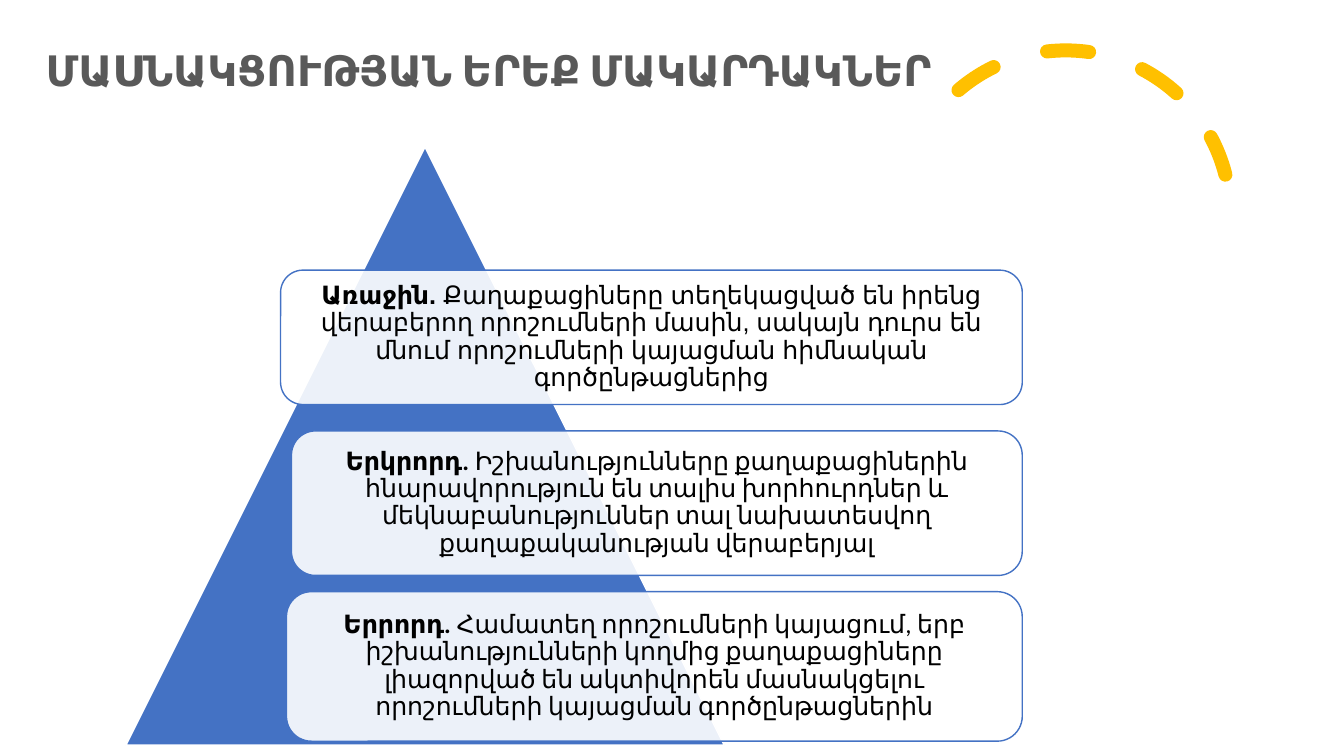
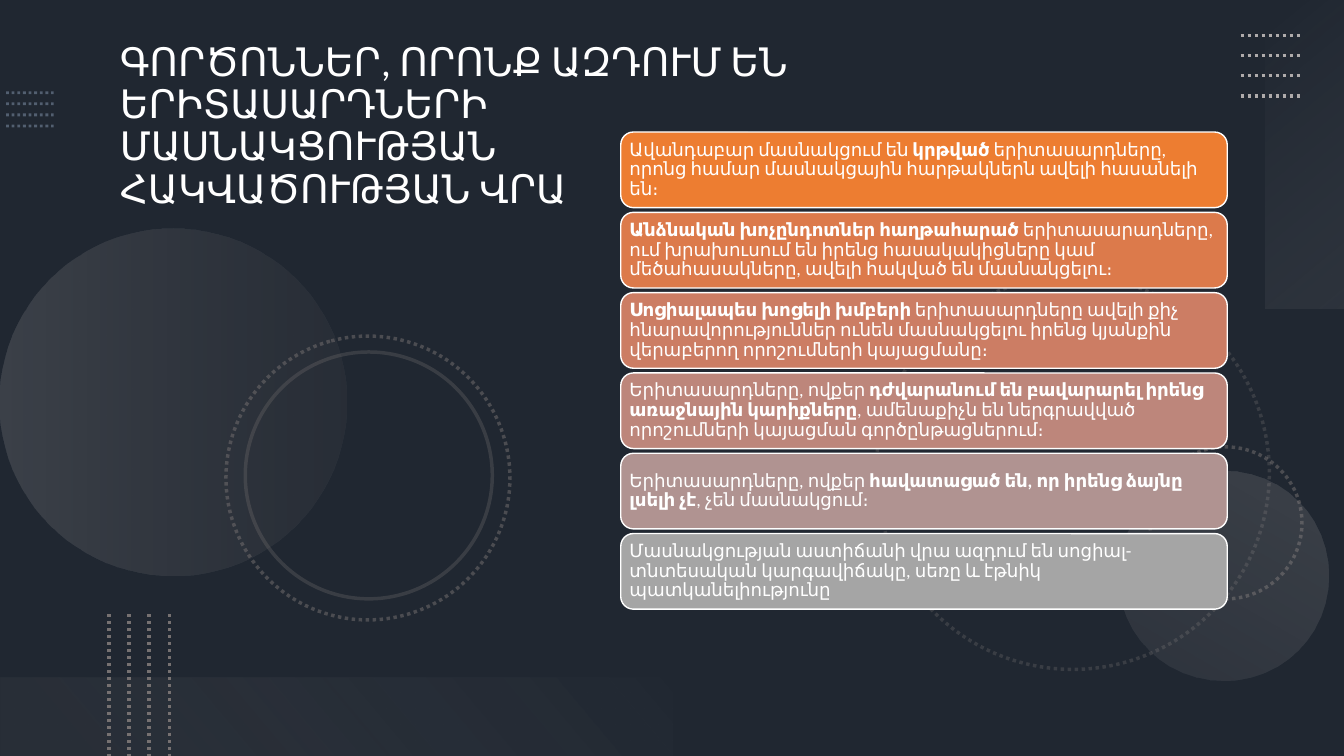
from lxml import etree
from pptx import Presentation
from pptx.dml.color import RGBColor
from pptx.enum.dml import MSO_LINE
from pptx.enum.shapes import MSO_CONNECTOR, MSO_SHAPE
from pptx.enum.text import MSO_ANCHOR, PP_ALIGN
from pptx.oxml.ns import qn
from pptx.util import Inches, Pt

SLIDE_W, SLIDE_H = Inches(13.33), Inches(7.5)
COLUMNS, ROWS = 80, 45

ARC, TRIANGLE = MSO_SHAPE.ARC, MSO_SHAPE.ISOSCELES_TRIANGLE
OVAL, RECT, ROUNDED = MSO_SHAPE.OVAL, MSO_SHAPE.RECTANGLE, MSO_SHAPE.ROUNDED_RECTANGLE
STRAIGHT = MSO_CONNECTOR.STRAIGHT
DASH, DOT = MSO_LINE.DASH, MSO_LINE.ROUND_DOT
LEFT, CENTER = PP_ALIGN.LEFT, PP_ALIGN.CENTER
TOP, MIDDLE = MSO_ANCHOR.TOP, MSO_ANCHOR.MIDDLE

BLACK = RGBColor(0x00, 0x00, 0x00)
WHITE = RGBColor(0xFF, 0xFF, 0xFF)
BLUE = RGBColor(0x44, 0x72, 0xC4)
GOLD = RGBColor(0xFF, 0xC0, 0x00)
CHARCOAL = RGBColor(0x59, 0x59, 0x59)
SLATE = RGBColor(0x44, 0x54, 0x6A)
STEEL = RGBColor(0x84, 0x97, 0xB0)
SILVER = RGBColor(0xAF, 0xAB, 0xAB)
GREY = RGBColor(0x76, 0x71, 0x71)
PALE = RGBColor(0xF5, 0xF5, 0xF5)
MIST = RGBColor(0xF1, 0xF0, 0xF0)
FACTOR_COLOURS = [
    RGBColor(0xED, 0x7D, 0x31), RGBColor(0xDC, 0x7A, 0x4B), RGBColor(0xCC, 0x7D, 0x64),
    RGBColor(0xBD, 0x86, 0x7B), RGBColor(0xB0, 0x93, 0x91), RGBColor(0xA5, 0xA5, 0xA5),
]

BODY_FONT, FIRST_LEVEL_FONT = "Calibri", "Arial"
LINE_SPACING = 0.9

LEVELS = [
    (16.7, 8, FIRST_LEVEL_FONT, "Առաջին. ",
     "Քաղաքացիները տեղեկացված են իրենց վերաբերող որոշումների մասին, "
     "սակայն դուրս են մնում որոշումների կայացման հիմնական գործընթացներից"),
    (17.35, 8.6, BODY_FONT, "Երկրորդ. ",
     "Իշխանությունները քաղաքացիներին հնարավորություն են տալիս խորհուրդներ և "
     "մեկնաբանություններ տալ նախատեսվող քաղաքականության վերաբերյալ"),
    (17.05, 8.9, BODY_FONT, "Երրորդ. ",
     "Համատեղ որոշումների կայացում, երբ իշխանությունների կողմից քաղաքացիները "
     "լիազորված են ակտիվորեն մասնակցելու որոշումների կայացման գործընթացներին"),
]

FACTORS = [
    [("Ավանդաբար մասնակցում են ", False), ("կրթված", True),
     (" երիտասարդները, որոնց համար մասնակցային հարթակներն ավելի հասանելի են։", False)],
    [("Անձնական խոչընդոտներ հաղթահարած", True),
     (" երիտասարադները, ում խրախուսում են իրենց հասակակիցները կամ "
      "մեծահասակները, ավելի հակված են մասնակցելու։", False)],
    [("Սոցիալապես խոցելի խմբերի", True),
     (" երիտասարդները ավելի քիչ հնարավորություններ ունեն մասնակցելու իրենց "
      "կյանքին վերաբերող որոշումների կայացմանը։", False)],
    [("Երիտասարդները, ովքեր ", False),
     ("դժվարանում են բավարարել իրենց առաջնային կարիքները", True),
     (", ամենաքիչն են ներգրավված որոշումների կայացման գործընթացներում։", False)],
    [("Երիտասարդները, ովքեր ", False),
     ("հավատացած են, որ իրենց ձայնը լսելի չէ", True), (", չեն մասնակցում։", False)],
    [("Մասնակցության աստիճանի վրա ազդում են սոցիալ-տնտեսական կարգավիճակը, "
      "սեռը և էթնիկ պատկանելիությունը", False)],
]


def across(columns):
    return round(SLIDE_W * columns / COLUMNS)


def down(rows):
    return round(SLIDE_H * rows / ROWS)


def cells(left, top, width, height):
    return across(left), down(top), across(width), down(height)


def set_opacity(element, percents):
    for colour, percent in zip(element.iter(qn("a:srgbClr")), percents):
        etree.SubElement(colour, qn("a:alpha")).set("val", str(percent * 1000))


def style_line(line, colour, width, dash=None):
    line.color.rgb = colour
    line.width = Pt(width)
    if dash is not None:
        line.dash_style = dash


def add_figure(slide, preset, area, fill=None, line=None, rotation=0, opacity=()):
    figure = slide.shapes.add_shape(preset, *cells(*area))
    figure.shadow.inherit = False
    figure.rotation = rotation
    if fill is None:
        figure.fill.background()
    else:
        figure.fill.solid()
        figure.fill.fore_color.rgb = fill
    if line is None:
        figure.line.fill.background()
    else:
        style_line(figure.line, *line)
    set_opacity(figure.element.spPr, opacity)
    return figure


def add_faded(slide, preset, area, rotation, angle, stops):
    figure = add_figure(slide, preset, area, rotation=rotation)
    figure.fill.gradient()
    figure.fill.gradient_angle = 360 - angle
    for stop, (position, colour, _) in zip(figure.fill.gradient_stops, stops):
        stop.position = position
        stop.color.rgb = colour
    set_opacity(figure.element.spPr, [percent for _, _, percent in stops])


def add_dotted_line(slide, start, end, colour, width, opacity):
    dots = slide.shapes.add_connector(
        STRAIGHT, across(start[0]), down(start[1]), across(end[0]), down(end[1]))
    style_line(dots.line, colour, width, DOT)
    set_opacity(dots.element.spPr, [opacity])
    etree.SubElement(dots.element.spPr, qn("a:effectLst"))


def add_dotted_rows(slide, left, right, top, step, colour, width, opacity=100):
    for row in range(4):
        y = top + row * step
        add_dotted_line(slide, (left, y), (right, y), colour, width, opacity)


def write(frame, runs, size, colour, font=BODY_FONT, align=LEFT, anchor=MIDDLE, inset=0.1):
    frame.word_wrap = True
    frame.vertical_anchor = anchor
    frame.margin_left = frame.margin_right = Inches(inset)
    frame.margin_top = frame.margin_bottom = Inches(min(inset, 0.07))
    paragraph = frame.paragraphs[0]
    paragraph.alignment = align
    paragraph.line_spacing = LINE_SPACING
    for text, bold in runs:
        run = paragraph.add_run()
        run.text = text
        run.font.name = font
        run.font.size = Pt(size)
        run.font.bold = bold
        run.font.color.rgb = colour


def add_title(slide, area, text, size, colour, bold, align, anchor):
    title = slide.shapes.add_textbox(*cells(*area))
    write(title.text_frame, [(text, bold)], size, colour, align=align, anchor=anchor)


def build_levels(slide):
    arc = add_figure(slide, ARC, (53.64, 3, 19.6, 19.6), line=(GOLD, 10, DASH), rotation=345.8)
    arc.adjustments[0] = 146.13
    arc.adjustments[1] = 0
    arc.element.spPr.find(qn("a:ln")).set("cap", "rnd")
    add_title(slide, (0, 0.65, 58.2, 7.4), "ՄԱՍՆԱԿՑՈՒԹՅԱՆ ԵՐԵՔ ՄԱԿԱՐԴԱԿՆԵՐ",
              30, CHARCOAL, True, CENTER, MIDDLE)
    add_figure(slide, TRIANGLE, (7.5, 8.75, 35.6, 35.6), BLUE, (WHITE, 1))
    right, top, pitch = 60.85, 16.08, 9.57
    for row, (left, height, font, name, description) in enumerate(LEVELS):
        level = add_figure(slide, ROUNDED, (left, top + row * pitch, right - left, height),
                           WHITE, (BLUE, 1), opacity=[90])
        write(level.text_frame, [(name, True), (description, False)], 18, BLACK,
              font, CENTER, inset=0.07)


def add_dark_backdrop(slide):
    slide.background.fill.solid()
    slide.background.fill.fore_color.rgb = SLATE
    add_figure(slide, RECT, (0, 0, COLUMNS, ROWS), BLACK, opacity=[53])
    add_dotted_rows(slide, 0.36, 3.2, 5.52, 0.66, STEEL, 2, 50)

    def ring(left, top, size, rotation, dash, opacity):
        add_figure(slide, OVAL, (left, top, size, size), None, (GREY, 2.5, dash),
                   rotation, [opacity])

    def disc(left, top, size, rotation, *stops):
        add_faded(slide, OVAL, (left, top, size, size), rotation, 90, stops)

    ring(52.15, 16.45, 23.4, 75, DOT, 30)
    ring(68.45, 26.6, 9.05, 270, DOT, 50)
    disc(0, 13.6, 20.65, 270, (0, SILVER, 20), (1, GREY, 10))
    disc(66.6, 28, 12.5, 210, (0, SILVER, 10), (1, SILVER, 20))
    ring(13.45, 20, 16.9, 75, DOT, 50)
    ring(14.6, 20.95, 14.7, 75, None, 30)

    band = 4.68
    add_faded(slide, RECT, (68.5, 6.85, 18.35, band), 270, 140,
              [(0, PALE, 0), (1, SILVER, 10)])
    add_dotted_rows(slide, 73.85, 77.45, 2.1, 1.2, SILVER, 2.5)
    add_faded(slide, RECT, (0, ROWS - band, COLUMNS / 2, band), 180, 140,
              [(0.1, GREY, 10), (1, MIST, 0)])
    for column in range(4):
        x = 6.48 + column * 1.2
        add_dotted_line(slide, (x, 36.55), (x, ROWS), GREY, 2.5, 100)


def build_factors(slide):
    add_dark_backdrop(slide)
    top, pitch = 7.86, 4.78
    for row, (runs, colour) in enumerate(zip(FACTORS, FACTOR_COLOURS)):
        factor = add_figure(slide, ROUNDED, (36.95, top + row * pitch, 36.1, 4.5),
                            colour, (WHITE, 1))
        write(factor.text_frame, runs, 13, WHITE, inset=0.05)
    add_title(slide, (6.55, 2.1, 42.55, 13.6),
              "ԳՈՐԾՈՆՆԵՐ, ՈՐՈՆՔ ԱԶԴՈՒՄ ԵՆ ԵՐԻՏԱՍԱՐԴՆԵՐԻ ՄԱՍՆԱԿՑՈՒԹՅԱՆ ՀԱԿՎԱԾՈՒԹՅԱՆ ՎՐԱ",
              28, WHITE, False, LEFT, TOP)


def main():
    deck = Presentation()
    deck.slide_width, deck.slide_height = SLIDE_W, SLIDE_H
    blank = deck.slide_layouts[6]
    for build in (build_levels, build_factors):
        build(deck.slides.add_slide(blank))
    deck.save("out.pptx")


if __name__ == "__main__":
    main()
